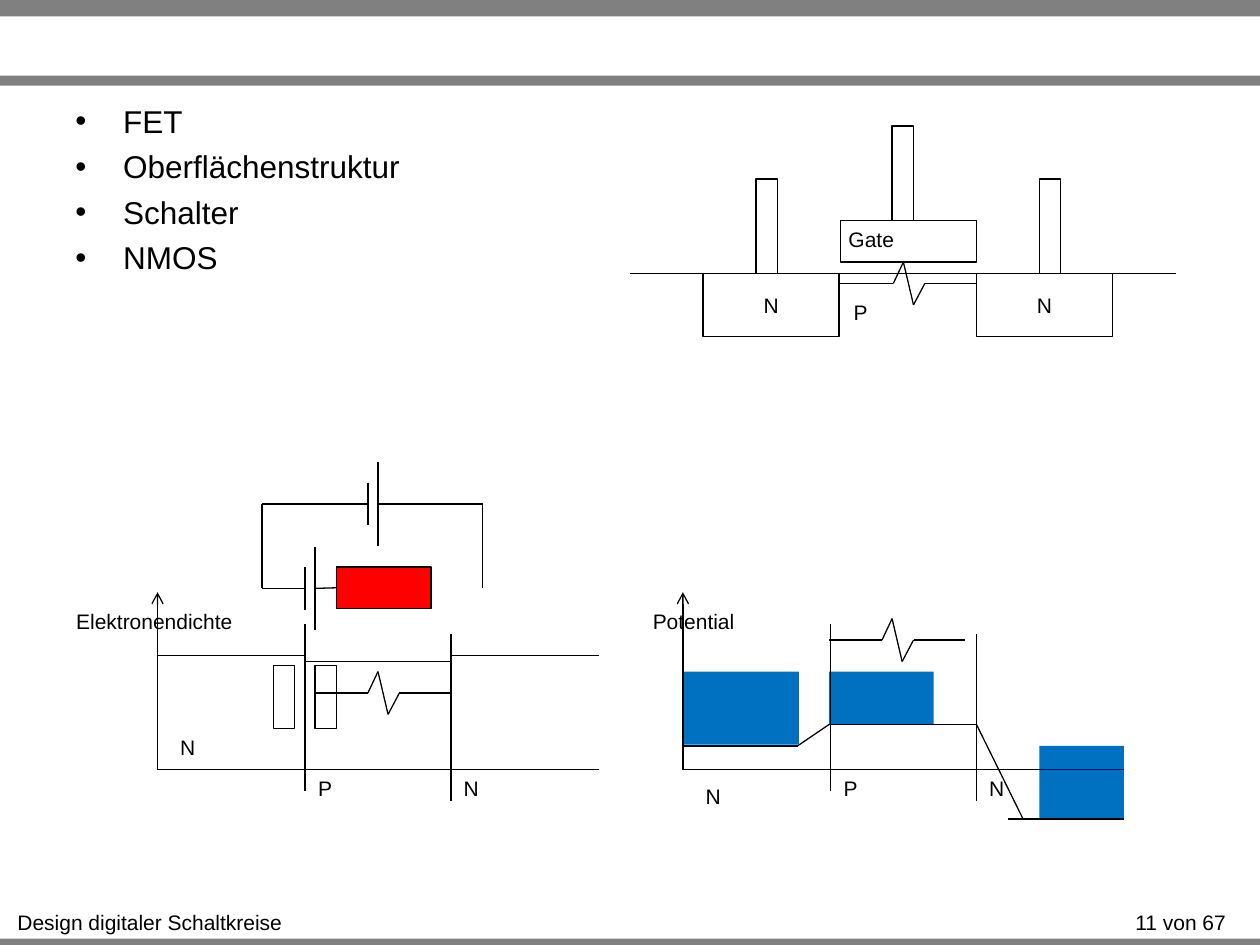
"""Build the slide on the FET with its structure, circuit and two diagrams."""
from itertools import pairwise

from lxml import etree
from pptx import Presentation
from pptx.dml.color import RGBColor
from pptx.enum.shapes import MSO_CONNECTOR, MSO_SHAPE
from pptx.enum.text import MSO_ANCHOR, PP_ALIGN
from pptx.oxml.ns import qn
from pptx.util import Inches, Pt

RECT = MSO_SHAPE.RECTANGLE
LINE = MSO_CONNECTOR.STRAIGHT
CENTER = PP_ALIGN.CENTER
MIDDLE = MSO_ANCHOR.MIDDLE
color = RGBColor.from_string
GREY, BLUE, RED, WHITE, BLACK = "808080", "0070C0", "FF0000", "FFFFFF", "000000"

deck = Presentation()
deck.slide_width, deck.slide_height = Inches(10), Inches(7.5)
slide = deck.slides.add_slide(deck.slide_layouts[6])
shapes = slide.shapes


def box(x, y, w, h, fill=None, edge=True):
    shape = shapes.add_shape(RECT, Inches(x), Inches(y), Inches(w), Inches(h))
    shape.shadow.inherit = False
    if fill:
        shape.fill.solid()
        shape.fill.fore_color.rgb = color(fill)
    else:
        shape.fill.background()
    if edge:
        shape.line.color.rgb = color(BLACK)
        shape.line.width = Pt(0.75)
    else:
        shape.line.fill.background()
    return shape


def wire(*points):
    for start, end in pairwise(points):
        line = shapes.add_connector(LINE, *map(Inches, start + end))
        line.line.color.rgb = color(BLACK)
        line.line.width = Pt(0.75)
        etree.SubElement(line._element.spPr, qn("a:effectLst"))
    return line


for y, h in [(7.45, 0.08), (0, 0.13), (0.6, 0.08)]:
    box(0, y, 10, h, GREY, False)
for area in [(5.42, 5.33, 0.92, 0.58), (8.25, 5.92, 0.67, 0.58), (6.58, 5.33, 0.83, 0.42)]:
    box(*area, BLUE, False)

body = shapes.add_textbox(Inches(0.5), Inches(0.76), Inches(9), Inches(2.33)).text_frame
body.word_wrap = True
body.text = "FET\nOberflächenstruktur\nSchalter\nNMOS"
for i, para in enumerate(body.paragraphs):
    props = para._p.get_or_add_pPr()
    props.set("marL", str(Inches(0.38)))
    props.set("indent", str(Inches(-0.38)))
    etree.SubElement(props, qn("a:buFont")).set("typeface", "Arial")
    etree.SubElement(props, qn("a:buChar")).set("char", "•")
    if i:
        para.space_before = Pt(4.4)
    look = {"name": "Arial", "size": Pt(18)}
    for key, value in look.items():
        setattr(para.font, key, value)
    para.font.color.rgb = color(BLACK)

labels = [
    ("Design digitaler Schaltkreise", 0.03, 7.17, 2.32),
    ("11 von 67", 8.83, 7.17, 1.08),
    ("Elektronendichte", 0.5, 4.78, 1.45),
    ("Potential", 5.08, 4.78, 0.85),
    ("N", 1.33, 5.78, 0.32),
    ("N", 5.5, 6.17, 0.32),
    ("P", 6.67, 2.33, 0.32),
    ("Gate", 6.63, 1.75, 0.57),
]

# diagram axes
for x in (1.25, 5.42):
    wire((x + 1.17, 4.95), (x + 1.17, 6.28))
    wire((x + 2.33, 5.03), (x + 2.33, 6.36))
    wire((x, 6.11), (x + 3.5, 6.11))
    axis = wire((x, 6.11), (x, 4.7))
    tip = etree.SubElement(axis.line._get_or_add_ln(), qn("a:tailEnd"))
    tip.set("type", "arrow")
    labels += [("P", x + 1.17, 6.11, 0.32), ("N", x + 2.33, 6.11, 0.32)]

for x, y in [(1.25, 5.2), (2.42, 5.25), (3.58, 5.2)]:
    wire((x, y), (x + 1.17, y))
box(2.5, 5.28, 0.17, 0.5)
box(2.17, 5.28, 0.17, 0.5, WHITE)

wire((5.42, 5.92), (6.33, 5.92), (6.58, 5.75), (7.75, 5.75), (8.12, 6.5))
wire((8, 6.5), (8.92, 6.5))

wire((2.42, 4.67), (2.08, 4.67), (2.08, 4), (2.92, 4))
wire((3, 4), (3.83, 4), (3.83, 4.67))
for x, y in [(2.92, 4), (2.42, 4.67)]:
    wire((x, y - 0.17), (x, y + 0.17))
    wire((x + 0.08, y - 0.33), (x + 0.08, y + 0.33))
load = box(2.67, 4.5, 0.75, 0.33, RED)
wire((2.67, 4.67), (2.5, 4.67)).begin_connect(load, 1)

for x, y in [(6.58, 5.08), (2.5, 5.5), (6.67, 2.25)]:
    wire((x, y), (x + 0.42, y), (x + 0.5, y - 0.17), (x + 0.58, y + 0.17),
         (x + 0.67, y), (x + 1.08, y))

wire((9.33, 2.17), (5, 2.17))
box(6.67, 1.75, 1.08, 0.33)
for x, y in [(8.25, 1.42), (6, 1.42), (7.08, 1)]:
    box(x, y, 0.17, 0.75)

frames = [(box(x, 2.17, 1.08, 0.5).text_frame, "N", MIDDLE) for x in (5.58, 7.75)]
for text, x, y, w in labels:
    label = shapes.add_textbox(Inches(x), Inches(y), Inches(w), Inches(0.3))
    frames.append((label.text_frame, text, None))
for frame, text, anchor in frames:
    frame.text = text
    frame.word_wrap = False
    frame.vertical_anchor = anchor
    para = frame.paragraphs[0]
    para.alignment = CENTER
    look = {"name": "Arial", "size": Pt(12)}
    for key, value in look.items():
        setattr(para.font, key, value)
    para.font.color.rgb = color(BLACK)

deck.save("out.pptx")
